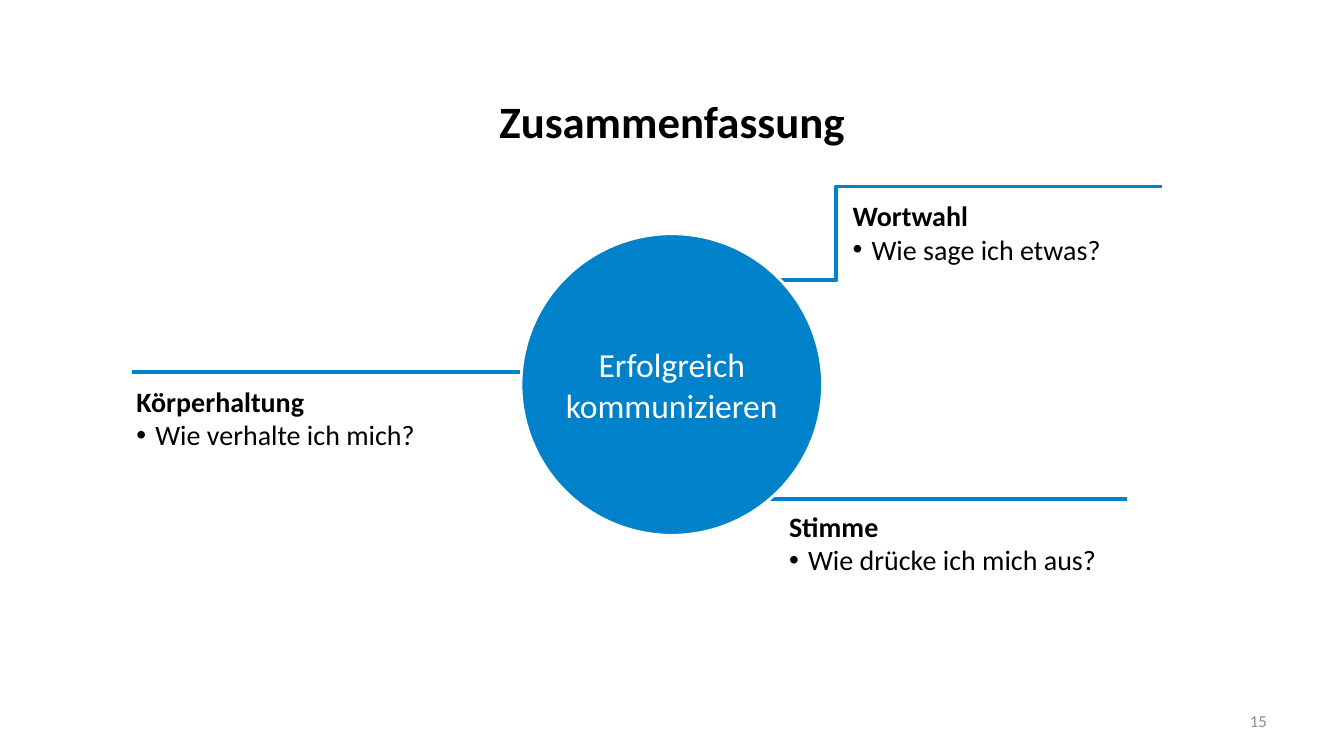
from dataclasses import dataclass

from lxml import etree
from pptx import Presentation
from pptx.dml.color import RGBColor
from pptx.enum.shapes import MSO_CONNECTOR as Link, MSO_SHAPE as Preset
from pptx.enum.text import MSO_ANCHOR as Anchor, MSO_AUTO_SIZE as AutoSize, PP_ALIGN as Align
from pptx.oxml.ns import qn
from pptx.util import Cm, Pt


@dataclass(frozen=True)
class Theme:
    font: str = "Calibri"
    accent: str = "0082CA"
    ink: str = "000000"
    paper: str = "FFFFFF"
    muted: str = "8C8C8C"
    title_size: float = 32
    hub_size: float = 24
    body_size: float = 20
    number_size: float = 12
    branch_width: float = 2.75
    rim_width: float = 2
    bullet_indent: float = 0.48


THEME = Theme()


def rgb(value):
    return RGBColor.from_string(value)


def place(shape, left, top, width, height):
    shape.left, shape.top = Cm(left), Cm(top)
    shape.width, shape.height = Cm(width), Cm(height)


def write(paragraph, text, size=THEME.body_size, color=THEME.ink, bold=False,
          align=Align.LEFT, bullet=False):
    """Fill one paragraph with formatted text, bulleted on request."""
    paragraph.alignment = align
    paragraph.space_before = Pt(0)
    props = paragraph._p.get_or_add_pPr()
    indent = Cm(THEME.bullet_indent) if bullet else 0
    props.set("marL", str(indent))
    props.set("indent", str(-indent))
    if bullet:
        etree.SubElement(props, qn("a:buFont")).set("typeface", "Arial")
        etree.SubElement(props, qn("a:buChar")).set("char", "•")
    else:
        etree.SubElement(props, qn("a:buNone"))
    run = paragraph.add_run()
    run.text = text
    run.font.name, run.font.size, run.font.bold = THEME.font, Pt(size), bold
    run.font.color.rgb = rgb(color)


def prepare_frame(shape, anchor):
    frame = shape.text_frame
    frame.word_wrap = True
    frame.auto_size = AutoSize.NONE
    frame.vertical_anchor = anchor
    return frame


def add_title(slide, text):
    title = slide.shapes.title
    place(title, 1.7, 2.13, 30.48, 1.8)
    frame = prepare_frame(title, Anchor.MIDDLE)
    write(frame.paragraphs[0], text, size=THEME.title_size, bold=True, align=Align.CENTER)


def fill_topic(topic, heading, question, box):
    place(topic, *box)
    frame = prepare_frame(topic, Anchor.TOP)
    write(frame.paragraphs[0], heading, bold=True)
    write(frame.add_paragraph(), question, bullet=True)


def add_branch(slide, start, end, kind=Link.STRAIGHT):
    branch = slide.shapes.add_connector(kind, *map(Cm, start + end))
    branch.line.color.rgb = rgb(THEME.accent)
    branch.line.width = Pt(THEME.branch_width)
    etree.SubElement(branch._element.spPr, qn("a:effectLst"))


def add_hub(slide, text, left, top, diameter):
    hub = slide.shapes.add_shape(Preset.OVAL, Cm(left), Cm(top), Cm(diameter), Cm(diameter))
    hub.shadow.inherit = False
    hub.fill.solid()
    hub.fill.fore_color.rgb = rgb(THEME.accent)
    hub.line.color.rgb = rgb(THEME.paper)
    hub.line.width = Pt(THEME.rim_width)
    frame = prepare_frame(hub, Anchor.MIDDLE)
    frame.margin_left = frame.margin_right = frame.margin_top = frame.margin_bottom = 0
    write(frame.paragraphs[0], text, size=THEME.hub_size, color=THEME.paper, align=Align.CENTER)


def add_slide_number(slide, number):
    corner = slide.shapes.add_textbox(Cm(24.28), Cm(17.65), Cm(7.9), Cm(1.02))
    frame = prepare_frame(corner, Anchor.MIDDLE)
    write(frame.paragraphs[0], number, size=THEME.number_size, color=THEME.muted,
          align=Align.RIGHT)


def main():
    deck = Presentation()
    deck.slide_width, deck.slide_height = Cm(33.87), Cm(19.05)
    comparison = deck.slide_layouts.get_by_name("Comparison")
    slide = deck.slides.add_slide(comparison)
    add_title(slide, "Zusammenfassung")

    # Topics around the hub; the layout's spare body is removed
    topics = [
        ("Stimme", "Wie drücke ich mich aus?", (19.63, 12.7, 9.3, 4.45)),
        ("Wortwahl", "Wie sage ich etwas?", (21.23, 4.88, 8.43, 6.45)),
        ("Körperhaltung", "Wie verhalte ich mich?", (3.18, 9.55, 10.31, 7.01)),
    ]
    *bodies, spare = list(slide.placeholders)[1:]
    spare._element.getparent().remove(spare._element)
    for body, topic in zip(bodies, topics):
        fill_topic(body, *topic)

    # Branches run beneath the hub
    add_branch(slide, (3.33, 9.37), (14.25, 9.37))
    add_branch(slide, (18.69, 12.57), (28.4, 12.57))
    add_branch(slide, (24.74, 4.7), (17.42, 7.06), kind=Link.ELBOW)
    add_hub(slide, "Erfolgreich kommunizieren", 13.13, 5.89, 7.6)
    add_branch(slide, (22.2, 4.7), (29.29, 4.7))

    add_slide_number(slide, "15")
    deck.save("out.pptx")


if __name__ == "__main__":
    main()
